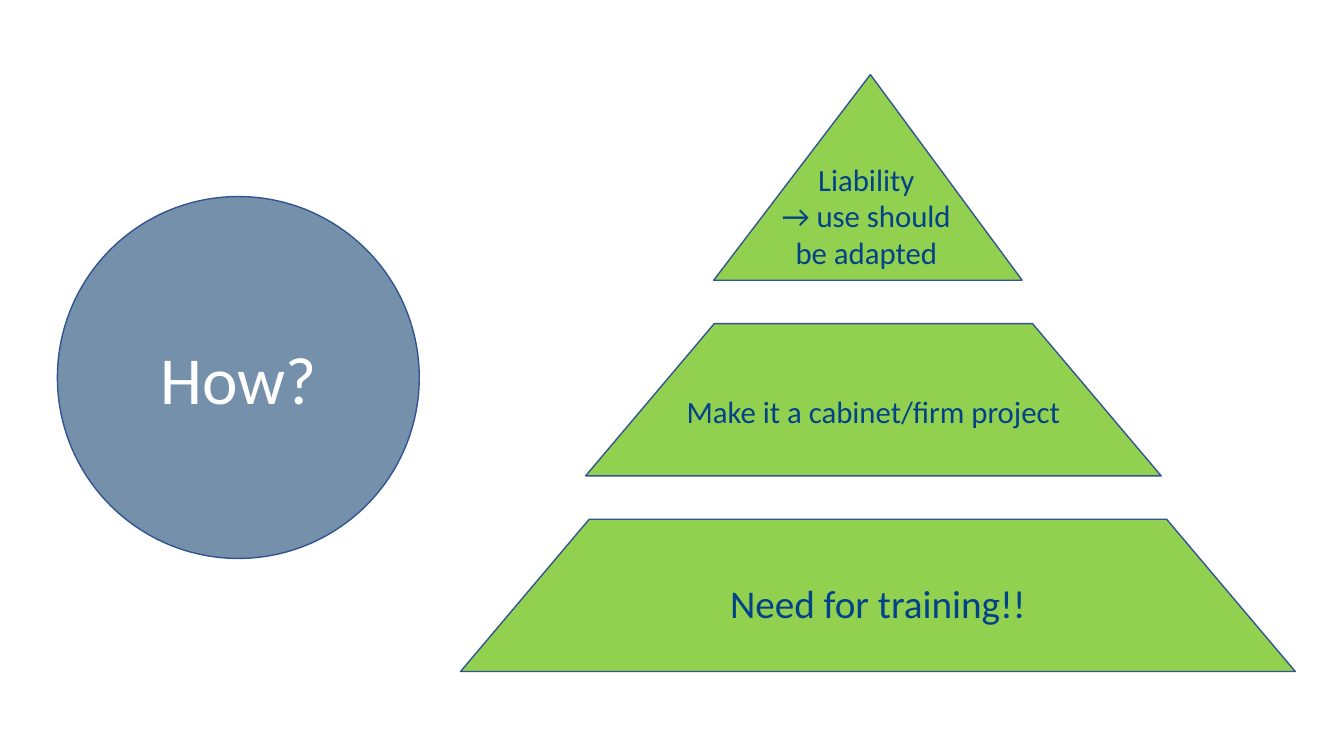
from dataclasses import dataclass

from pptx import Presentation
from pptx.dml.color import RGBColor
from pptx.enum.shapes import MSO_SHAPE as Preset
from pptx.enum.text import MSO_ANCHOR as Anchor, PP_ALIGN as Align
from pptx.util import Pt

QUESTION = "How?"
PEAK_LINES = ["Liability", "→ use should be adapted"]


@dataclass(frozen=True)
class Theme:
    font: str = "Calibri"
    circle: str = "7590AB"
    tier: str = "92D050"
    outline: str = "325491"
    ink: str = "014289"
    white: str = "FFFFFF"
    question_size: float = 48
    base_size: float = 28
    body_size: float = 22


THEME = Theme()

# Tiers from the top: preset, adjustment, left, width, height, lines, type size
TIERS = [
    (Preset.ISOSCELES_TRIANGLE, 0.508, 509.8, 220.3, 146.9, [], THEME.body_size),
    (Preset.TRAPEZOID, 0.845, 418.3, 411.1, 108.7,
     ["Make it a cabinet/firm project"], THEME.body_size),
    (Preset.TRAPEZOID, 0.845, 329, 596.2, 108.7,
     ["Need for training!!"], THEME.base_size),
]
PYRAMID_TOP, TIER_GAP = 53.3, 31
CIRCLE_BOX = (41, 140.4, 258.5, 258.5)
PEAK_TEXT_BOX = (548.6, 110.9, 140.4, 113.8)


def write(frame, lines, size, color, anchor):
    frame.word_wrap = True
    frame.vertical_anchor = anchor
    for index, line in enumerate(lines):
        paragraph = frame.paragraphs[0] if index == 0 else frame.add_paragraph()
        paragraph.alignment = Align.CENTER
        run = paragraph.add_run()
        run.text = line
        run.font.name = THEME.font
        run.font.size = Pt(size)
        run.font.color.rgb = RGBColor.from_string(color)


def add_outlined(slide, preset, box, fill):
    shape = slide.shapes.add_shape(preset, *map(Pt, box))
    shape.shadow.inherit = False
    shape.fill.solid()
    shape.fill.fore_color.rgb = RGBColor.from_string(fill)
    shape.line.color.rgb = RGBColor.from_string(THEME.outline)
    shape.line.width = Pt(1)
    return shape


def add_pyramid(slide):
    top = PYRAMID_TOP
    for preset, adjustment, left, width, height, lines, size in TIERS:
        tier = add_outlined(slide, preset, (left, top, width, height), THEME.tier)
        tier.adjustments[0] = adjustment
        write(tier.text_frame, lines, size, THEME.ink, Anchor.MIDDLE)
        top += height + TIER_GAP
    peak = slide.shapes.add_textbox(*map(Pt, PEAK_TEXT_BOX))
    write(peak.text_frame, PEAK_LINES, THEME.body_size, THEME.ink, Anchor.TOP)


def main():
    deck = Presentation()
    deck.slide_width, deck.slide_height = Pt(960), Pt(540)
    slide = deck.slides.add_slide(deck.slide_layouts[6])
    circle = add_outlined(slide, Preset.OVAL, CIRCLE_BOX, THEME.circle)
    write(circle.text_frame, [QUESTION], THEME.question_size, THEME.white, Anchor.MIDDLE)
    add_pyramid(slide)
    deck.save("out.pptx")


if __name__ == "__main__":
    main()
